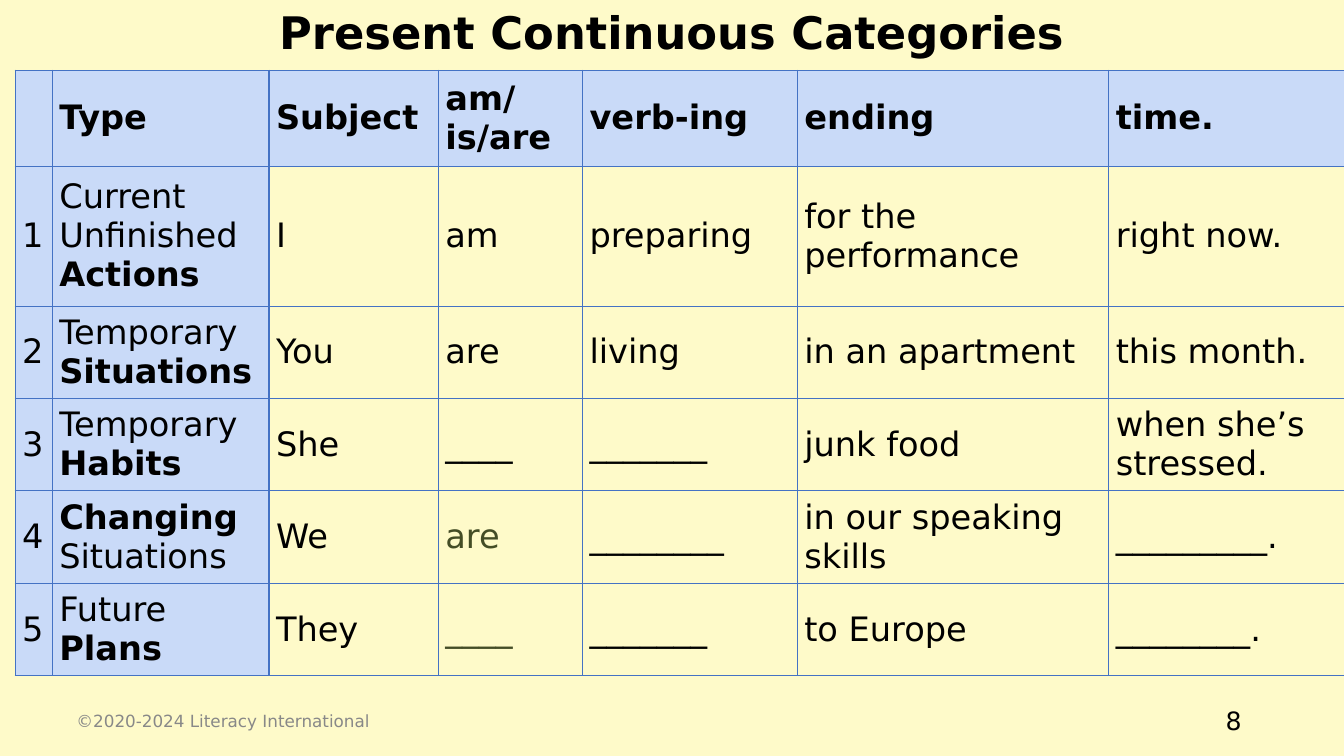
from dataclasses import dataclass

from lxml import etree
from pptx import Presentation
from pptx import util as u
from pptx.dml.color import RGBColor
from pptx.enum import text
from pptx.oxml import ns


@dataclass(frozen=True)
class Theme:
    font: str = "DejaVu Sans"
    paper: str = "FEFAC9"
    head: str = "C9DAF8"
    grid: str = "4472C4"
    ink: str = "000000"
    answer: str = "444D26"
    muted: str = "888888"
    title_size: int = 32
    body_size: int = 24
    number_size: int = 18
    footer_size: int = 12


class SlideBuilder:
    def __init__(self, page, theme):
        self.page, self.theme = page, theme
        page.background.fill.solid()
        page.background.fill.fore_color.rgb = RGBColor.from_string(theme.paper)

    def style(self, para, size, color, bold=None):
        font = para.font
        font.name, font.size, font.bold = self.theme.font, u.Pt(size), bold
        font.color.rgb = RGBColor.from_string(color)

    def label(self, words, left, top, width, height, size, color,
              align=text.PP_ALIGN.LEFT, anchor=text.MSO_ANCHOR.MIDDLE, bold=False):
        box = self.page.shapes.add_textbox(*map(u.Pt, (left, top, width, height)))
        frame = box.text_frame
        frame.word_wrap, frame.vertical_anchor = True, anchor
        para = frame.paragraphs[0]
        para.text, para.alignment = words, align
        self.style(para, size, color, bold)

    def borders(self, cell):
        properties = cell._tc.get_or_add_tcPr()
        for side in ("lnL", "lnR", "lnT", "lnB"):
            line = etree.SubElement(properties, ns.qn(f"a:{side}"), w=str(u.Pt(1)))
            fill = etree.SubElement(line, ns.qn("a:solidFill"))
            etree.SubElement(fill, ns.qn("a:srgbClr"), val=self.theme.grid)

    def cell(self, cell, spans, color, shaded, bold):
        """Fill a cell; spans is a string or a list of (words, bold) pairs."""
        self.borders(cell)
        if shaded:
            cell.fill.solid()
            cell.fill.fore_color.rgb = RGBColor.from_string(self.theme.head)
        else:
            cell.fill.background()
        cell.vertical_anchor = text.MSO_ANCHOR.MIDDLE
        cell.margin_left = cell.margin_right = u.Pt(5)
        cell.margin_top = cell.margin_bottom = u.Pt(5)
        para = cell.text_frame.paragraphs[0]
        if isinstance(spans, str):
            para.text = spans
            self.style(para, self.theme.body_size, color, bold)
        else:
            for words, strong in spans:
                span = para.add_run()
                span.text, span.font.bold = words, strong
            self.style(para, self.theme.body_size, color)

    def table(self, rows, left, top, widths, heights, shaded_columns, answers):
        table = self.page.shapes.add_table(
            len(rows), len(widths),
            *map(u.Pt, (left, top, sum(widths), sum(heights)))).table
        table.first_row = table.horz_banding = False
        for column, width in zip(table.columns, widths):
            column.width = u.Pt(width)
        for row, height in zip(table.rows, heights):
            row.height = u.Pt(height)
        for r, row in enumerate(rows):
            for c, spans in enumerate(row):
                color = self.theme.answer if (r, c) in answers else self.theme.ink
                self.cell(table.cell(r, c), spans, color,
                          shaded=r == 0 or c < shaded_columns, bold=r == 0)


CATEGORIES = [
    ["", "Type", "Subject", "am/is/are", "verb-ing", "ending", "time."],
    ["1", [("Current Unfinished ", False), ("Actions", True)],
     "I", "am", "preparing", "for the performance", "right now."],
    ["2", [("Temporary ", False), ("Situations", True)],
     "You", "are", "living", "in an apartment", "this month."],
    ["3", [("Temporary ", False), ("Habits", True)],
     "She", "____", "_______", "junk food", "when she’s stressed."],
    ["4", [("Changing ", True), ("Situations", False)],
     "We", "are", "________", "in our speaking skills", "_________."],
    ["5", [("Future ", False), ("Plans", True)],
     "They", "____", "_______", "to Europe", "________."],
]


def main():
    theme = Theme()
    deck = Presentation()
    deck.slide_width, deck.slide_height = u.Pt(960), u.Pt(540)
    slide = SlideBuilder(deck.slides.add_slide(deck.slide_layouts[6]), theme)

    # Sentence table
    slide.table(CATEGORIES, 10.8, 50.2,
                widths=[26.6, 154.8, 121, 103, 153.4, 222.5, 168.5],
                heights=[68.5, 100] + [66] * 4,
                shaded_columns=2, answers={(4, 3), (5, 3)})

    # Title
    slide.label("Present Continuous Categories", 59, 0, 842, 60,
                theme.title_size, theme.ink, text.PP_ALIGN.CENTER,
                text.MSO_ANCHOR.TOP, bold=True)

    # Slide number and footer
    slide.label("8", 678, 500.4, 216, 28.8, theme.number_size, theme.ink,
                text.PP_ALIGN.RIGHT)
    slide.label("©2020-2024 Literacy International", 47.5, 500.4, 324, 28.8,
                theme.footer_size, theme.muted)

    deck.save("out.pptx")


if __name__ == "__main__":
    main()
